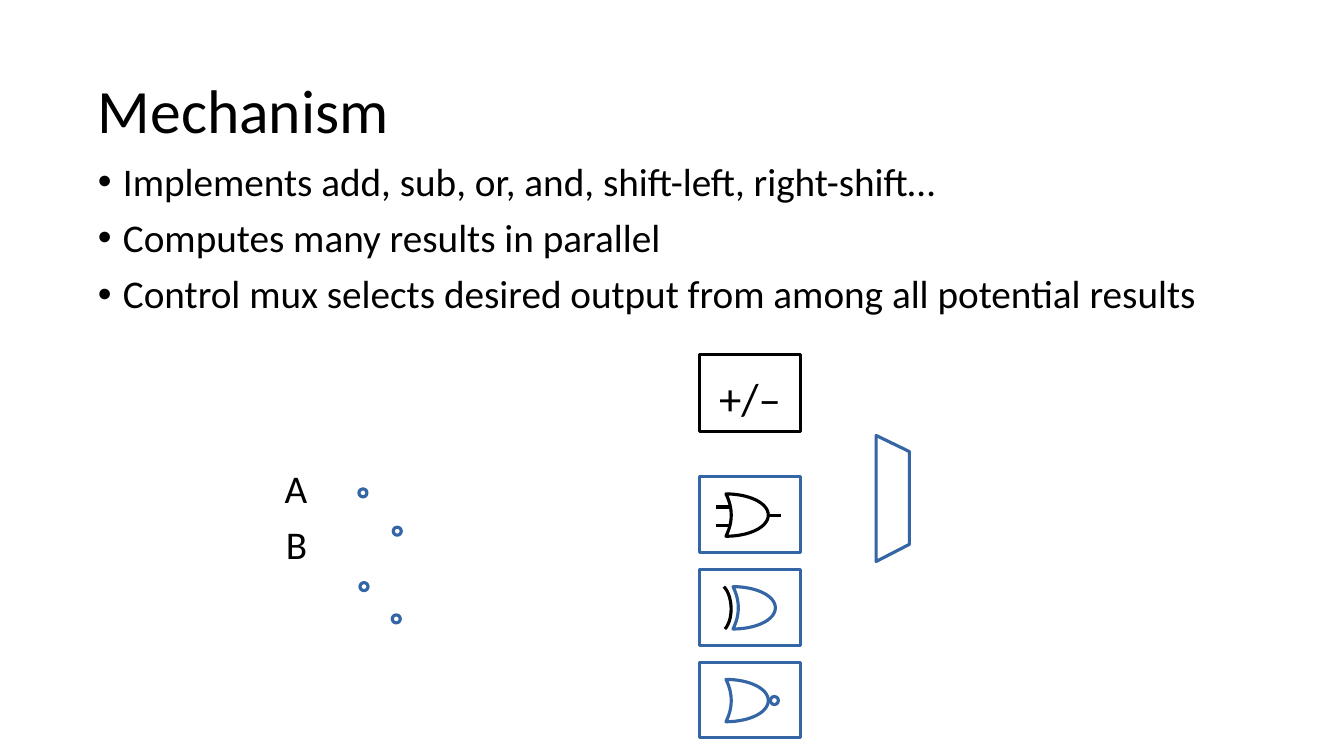
import pptx
import pptx.dml.color
import pptx.enum.shapes
import pptx.enum.text
import pptx.oxml
import pptx.oxml.ns
import pptx.util

Inches = pptx.util.Inches
Pt = pptx.util.Pt
SHAPE = pptx.enum.shapes.MSO_SHAPE
ALIGN = pptx.enum.text.PP_ALIGN
ANCHOR = pptx.enum.text.MSO_ANCHOR

COLORS = {"ink": "000000", "blue": "3465A4", "paper": "FFFFFF"}
FONT = "Calibri"
LINE_WIDTH = 2.25
CURVE_STEPS = 16

BULLETS = [
    "Implements add, sub, or, and, shift-left, right-shift…",
    "Computes many results in parallel",
    "Control mux selects desired output from among all potential results",
]
INPUT_NODES = [(3.6, 4.89), (3.94, 5.27), (3.61, 5.82), (3.93, 6.14)]
NODE_SIZE = 0.08

UNIT_LEFT, UNIT_WIDTH, UNIT_HEIGHT = 6.94, 1, 0.75
LOGIC_TOP, LOGIC_STEP = 4.73, 0.92
GATE_INSET, GATE_SIZE = 0.17, 0.42


def rgb(name):
    return pptx.dml.color.RGBColor.from_string(COLORS[name])


def style_line(line, color):
    line.color.rgb = rgb(color)
    line.width = Pt(LINE_WIDTH)


def style_shape(shape, color, filled=True):
    shape.shadow.inherit = False
    if filled:
        shape.fill.solid()
        shape.fill.fore_color.rgb = rgb("paper")
    else:
        shape.fill.background()
    style_line(shape.line, color)


def add_text(slide, box, lines, size, spacing, align=ALIGN.LEFT,
             anchor=ANCHOR.TOP, inset=0.05):
    """Add a text box with one paragraph per line and return its paragraphs."""
    frame = slide.shapes.add_textbox(*map(Inches, box)).text_frame
    frame.word_wrap = True
    frame.vertical_anchor = anchor
    frame.margin_left = frame.margin_right = Inches(inset)
    frame.margin_top = frame.margin_bottom = Inches(inset)
    frame.text = "\n".join(lines)
    for paragraph in frame.paragraphs:
        paragraph.alignment = align
        paragraph.line_spacing = spacing
        for run in paragraph.runs:
            run.font.name = FONT
            run.font.size = Pt(size)
            run.font.color.rgb = rgb("ink")
    return frame.paragraphs


def add_bullet(paragraph):
    paragraph.space_before = Pt(10)
    properties = paragraph._p.get_or_add_pPr()
    properties.set("marL", str(Inches(0.25)))
    properties.set("indent", str(-Inches(0.25)))
    namespace = pptx.oxml.ns.nsdecls("a")
    properties.append(pptx.oxml.parse_xml(f'<a:buFont {namespace} typeface="Arial"/>'))
    properties.append(pptx.oxml.parse_xml(f'<a:buChar {namespace} char="•"/>'))


def add_preset(slide, kind, box, color):
    style_shape(slide.shapes.add_shape(kind, *map(Inches, box)), color)


def add_node(slide, center_x, center_y):
    box = (center_x - NODE_SIZE / 2, center_y - NODE_SIZE / 2, NODE_SIZE, NODE_SIZE)
    add_preset(slide, SHAPE.OVAL, box, "blue")


def add_wire(slide, start_x, end_x, y):
    wire = slide.shapes.add_connector(
        pptx.enum.shapes.MSO_CONNECTOR.STRAIGHT,
        Inches(start_x), Inches(y), Inches(end_x), Inches(y))
    style_line(wire.line, "ink")
    wire._element.spPr.append(pptx.oxml.parse_xml(
        f'<a:effectLst {pptx.oxml.ns.nsdecls("a")}/>'))


def curve(*controls):
    """Sample a cubic Bezier curve given by its four control points."""
    points = []
    for step in range(CURVE_STEPS + 1):
        t = step / CURVE_STEPS
        weights = ((1 - t) ** 3, 3 * t * (1 - t) ** 2, 3 * t * t * (1 - t), t ** 3)
        points.append(tuple(sum(weight * control[axis]
                                for weight, control in zip(weights, controls))
                            for axis in (0, 1)))
    return points


def add_outline(slide, points, color, closed=True):
    points = [(Inches(x), Inches(y)) for x, y in points]
    builder = slide.shapes.build_freeform(*points[0])
    builder.add_line_segments(points[1:], close=closed)
    style_shape(builder.convert_to_shape(), color, filled=closed)


def add_gate(slide, left, top, color):
    """Draw the curved body of an OR gate."""
    right, bottom, middle = left + GATE_SIZE, top + GATE_SIZE, top + GATE_SIZE / 2
    points = (
        curve((left, bottom), (left + 0.23, bottom), (right, middle + 0.12), (right, middle))
        + curve((right, middle), (right, middle - 0.12), (left + 0.23, top), (left, top))
        + curve((left, top), (left + 0.07, top + 0.14), (left + 0.07, top + 0.28),
                (left, bottom)))
    add_outline(slide, points, color)


def add_logic_units(slide):
    tops = [LOGIC_TOP + LOGIC_STEP * index for index in range(3)]
    for top in tops:
        add_preset(slide, SHAPE.RECTANGLE,
                   (UNIT_LEFT, top, UNIT_WIDTH, UNIT_HEIGHT), "blue")
    or_top, xor_top, nor_top = (top + GATE_INSET for top in tops)

    add_gate(slide, 7.2, or_top, "ink")
    for start_x, end_x, offset in [(7.1, 7.23, 0.13), (7.1, 7.23, 0.31), (7.62, 7.75, 0.21)]:
        add_wire(slide, start_x, end_x, or_top + offset)

    add_gate(slide, 7.27, xor_top, "blue")
    xor_arc = (curve((7.18, 5.82), (7.24, 5.88), (7.27, 6.02), (7.24, 6.14))
               + curve((7.24, 6.14), (7.23, 6.18), (7.21, 6.22), (7.19, 6.24)))
    add_outline(slide, xor_arc, "ink", closed=False)

    add_gate(slide, 7.2, nor_top, "blue")
    add_node(slide, 7.68, nor_top + GATE_SIZE / 2)


def main():
    presentation = pptx.Presentation()
    presentation.slide_width = Inches(13.33)
    presentation.slide_height = Inches(7.5)
    slide = presentation.slides.add_slide(presentation.slide_layouts[6])

    add_text(slide, (0.92, 0.4, 11.5, 1.45), ["Mechanism"], 44, 0.9, anchor=ANCHOR.MIDDLE)
    for paragraph in add_text(slide, (0.92, 1.56, 11.5, 2.08), BULLETS, 28, 0.9):
        add_bullet(paragraph)

    add_preset(slide, SHAPE.RECTANGLE, (UNIT_LEFT, 3.52, UNIT_WIDTH, 0.76), "ink")
    add_text(slide, (UNIT_LEFT, 3.58, UNIT_WIDTH, 0.64), ["+/–"], 32, 1.16,
             ALIGN.CENTER, ANCHOR.MIDDLE, inset=0)

    add_text(slide, (2.6, 4.48, 0.67, 0.59), ["A"], 28, 1.16, ALIGN.CENTER)
    add_text(slide, (2.44, 5.04, 1, 0.59), ["B"], 28, 1.16, ALIGN.CENTER)
    for center_x, center_y in INPUT_NODES:
        add_node(slide, center_x, center_y)

    add_logic_units(slide)
    mux = [(8.69, 4.32), (9.02, 4.48), (9.02, 5.4), (8.69, 5.57)]
    add_outline(slide, mux, "blue")

    presentation.save("out.pptx")


if __name__ == "__main__":
    main()
